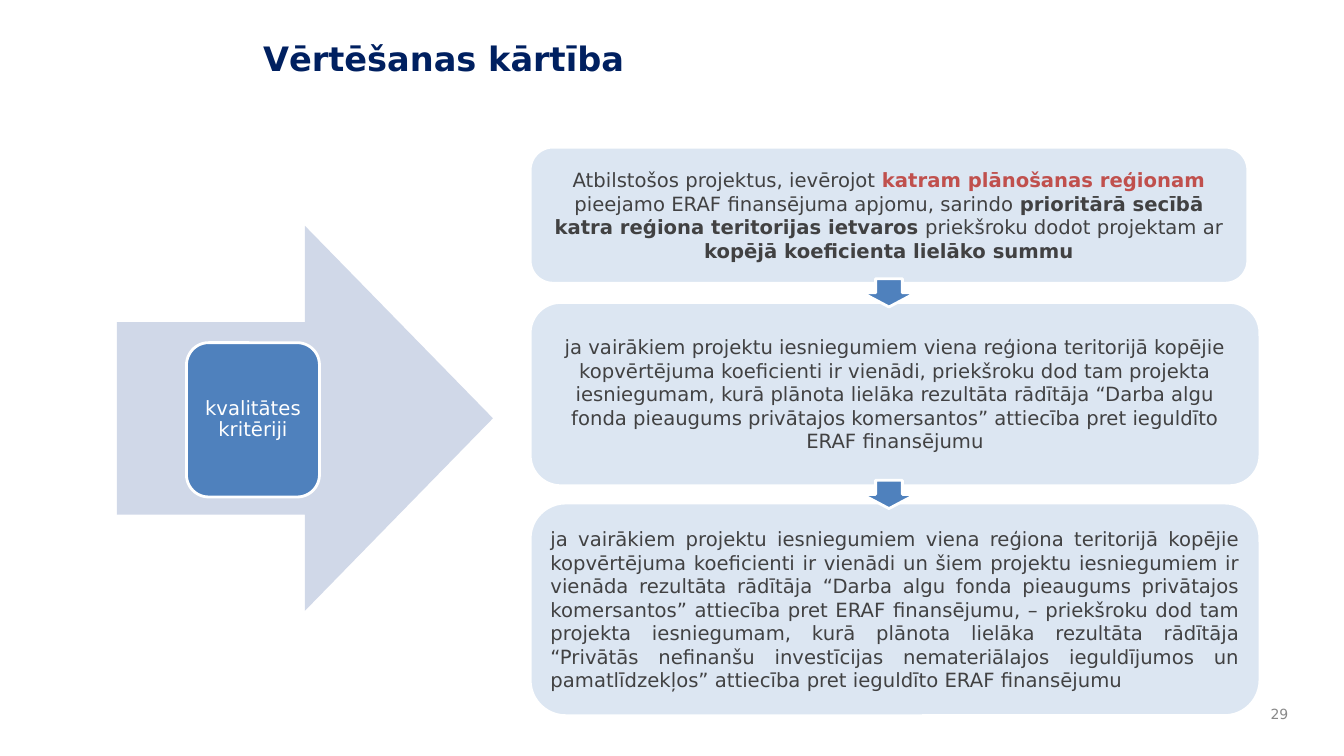
from pptx import Presentation
from pptx.dml.color import RGBColor
from pptx.enum import shapes, text
from pptx.util import Pt

FONT = "DejaVu Sans"
WHITE, BLUE, PALE, ARROW = "FFFFFF", "4F81BD", "DCE6F2", "D0D8E8"
GREY, RED, NAVY, NUMBER = "414142", "C0504D", "002060", "898989"
MSO, AL, ANCHOR = shapes.MSO_SHAPE, text.PP_ALIGN, text.MSO_ANCHOR

TITLE = "Vērtēšanas kārtība"
CRITERIA = "kvalitātes kritēriji"
PAGE = "29"
STEPS = [
    (105.1, 512.6, 97.2, AL.CENTER, [
        ("Atbilstošos projektus, ievērojot ", GREY, False),
        ("katram plānošanas reģionam ", RED, True),
        ("pieejamo ERAF finansējuma apjomu, sarindo\u00a0", GREY, False),
        ("prioritārā secībā katra reģiona teritorijas ietvaros", GREY, True),
        (" priekšroku dodot projektam ar ", GREY, False),
        ("kopējā koeficienta lielāko summu", GREY, True)]),
    (216, 521.3, 131, AL.CENTER, [
        ("ja vairākiem projektu iesniegumiem viena reģiona teritorijā kopējie "
         "kopvērtējuma koeficienti ir vienādi, priekšroku dod tam projekta "
         "iesniegumam, kurā plānota lielāka rezultāta rādītāja “Darba algu "
         "fonda pieaugums privātajos komersantos” attiecība pret ieguldīto "
         "ERAF finansējumu", GREY, False)]),
    (359.3, 521.3, 151.9, AL.JUSTIFY, [
        ("ja vairākiem projektu iesniegumiem viena reģiona teritorijā kopējie "
         "kopvērtējuma koeficienti ir vienādi un šiem projektu iesniegumiem ir "
         "vienāda rezultāta rādītāja “Darba algu fonda pieaugums privātajos "
         "komersantos” attiecība pret ERAF finansējumu, – priekšroku dod tam "
         "projekta iesniegumam, kurā plānota lielāka rezultāta rādītāja "
         "“Privātās nefinanšu investīcijas nemateriālajos ieguldījumos un "
         "pamatlīdzekļos” attiecība pret ieguldīto ERAF finansējumu",
         GREY, False)]),
]
STEP_LEFT = 378.7
DOWN_W, DOWN_H = 38.2, 20.2


def rgb(value):
    return RGBColor.from_string(value)


def add_shape(kind, left, top, width, height, fill, line=WHITE):
    sp = s.shapes.add_shape(kind, Pt(left), Pt(top), Pt(width), Pt(height))
    sp.shadow.inherit = False
    sp.fill.solid()
    sp.fill.fore_color.rgb = rgb(fill)
    if line:
        sp.line.color.rgb = rgb(line)
        sp.line.width = Pt(2)
    else:
        sp.line.fill.background()
    return sp


def write(sp, runs, size, align, anchor=ANCHOR.MIDDLE):
    tf = sp.text_frame
    tf.word_wrap = True
    tf.auto_size = text.MSO_AUTO_SIZE.NONE
    tf.vertical_anchor = anchor
    p = tf.paragraphs[0]
    p.alignment = align
    p.font.size = Pt(size)
    p.font.name = FONT
    for words, color, bold in runs:
        r = p.add_run()
        r.text = words
        r.font.color.rgb = rgb(color)
        r.font.bold = bold
    return tf


prs = Presentation()
prs.slide_width, prs.slide_height = Pt(960), Pt(540)
s = prs.slides.add_slide(prs.slide_layouts[5])

title = s.shapes.title
title.left, title.top, title.width, title.height = Pt(180.7), Pt(23.8), Pt(731.5), Pt(84.2)
write(title, [(TITLE, NAVY, True)], 24, AL.LEFT, ANCHOR.TOP)

add_shape(MSO.RIGHT_ARROW, 83.5, 161.3, 268.6, 275, ARROW, None)
criteria = add_shape(MSO.ROUNDED_RECTANGLE, 133.2, 244.8, 95, 110.2, BLUE)
tf = write(criteria, [(CRITERIA, WHITE, False)], 14, AL.CENTER)
tf.margin_left = tf.margin_right = tf.margin_top = tf.margin_bottom = Pt(4.2)
tf.paragraphs[0].line_spacing = 0.9

for top, width, height, align, runs in STEPS:
    box = add_shape(MSO.ROUNDED_RECTANGLE, STEP_LEFT, top, width, height, PALE)
    write(box, runs, 14, align)

center = STEP_LEFT + STEPS[0][1] / 2
for upper, lower in zip(STEPS, STEPS[1:]):
    middle = (upper[0] + upper[2] + lower[0]) / 2
    add_shape(MSO.DOWN_ARROW, center - DOWN_W / 2, middle - DOWN_H / 2, DOWN_W, DOWN_H, BLUE)

page = s.shapes.add_textbox(Pt(895.7), Pt(498.2), Pt(31.7), Pt(23.8))
write(page, [(PAGE, NUMBER, False)], 10, AL.RIGHT)

prs.save("out.pptx")
